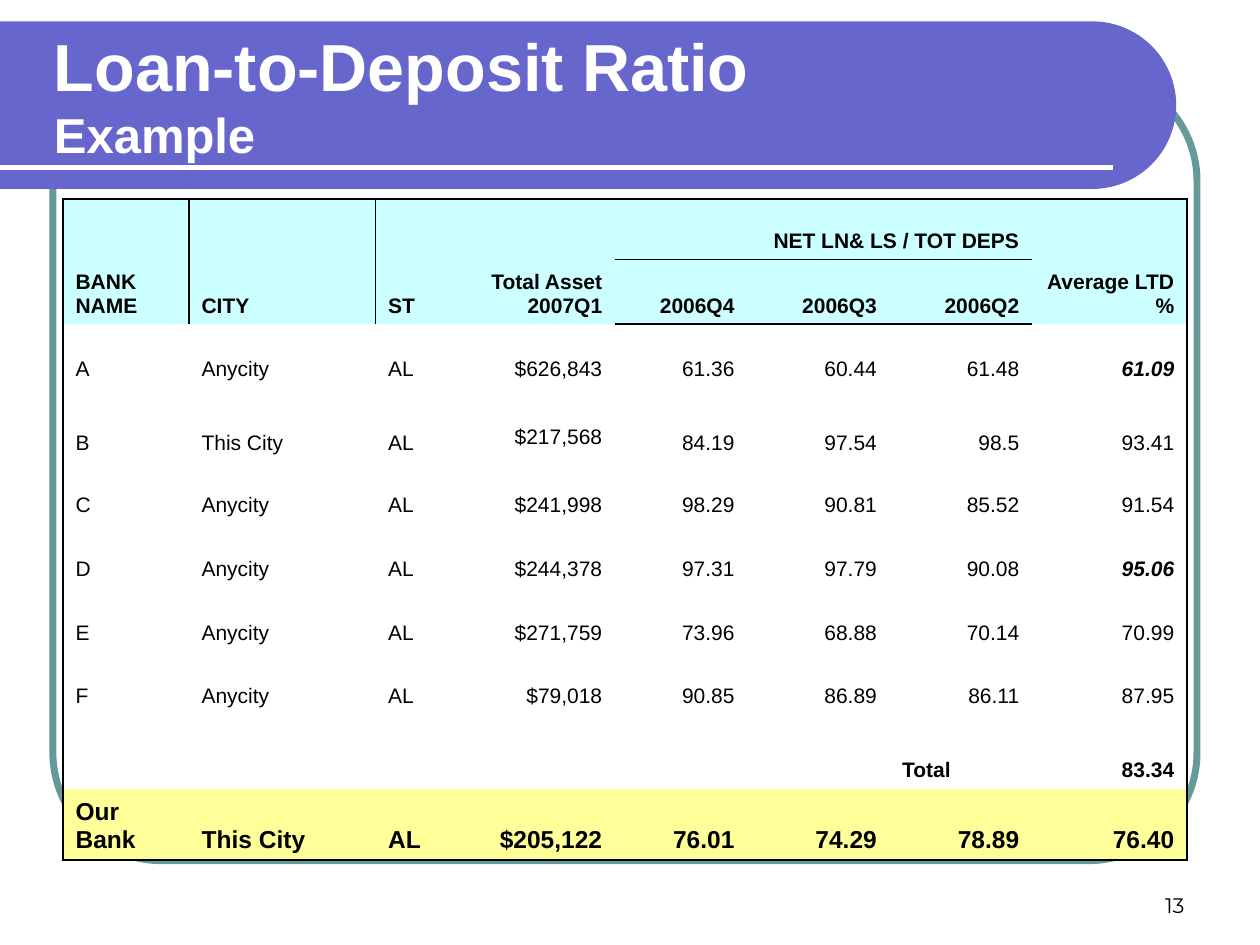
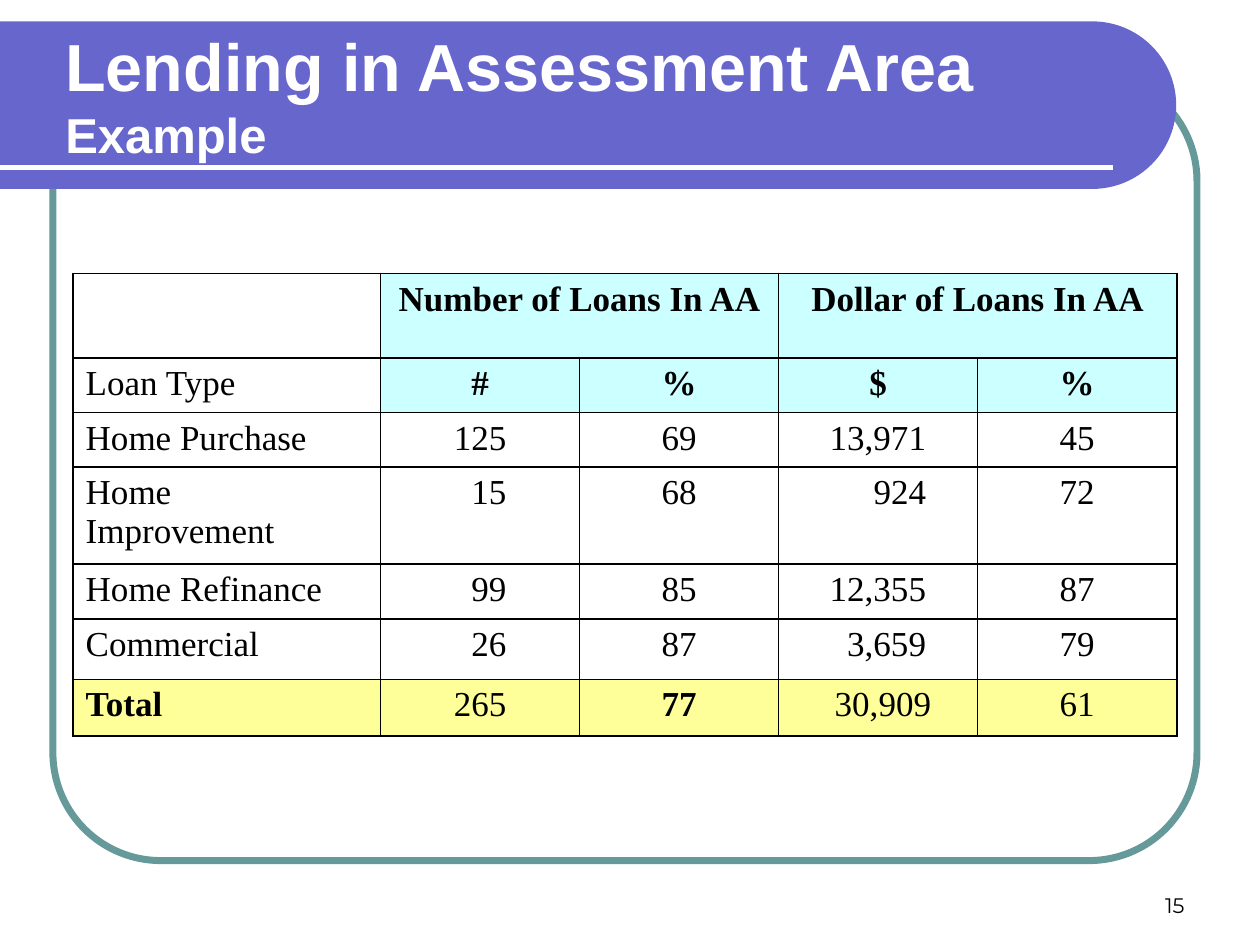
from math import cos, pi, sin

from lxml import etree
from pptx import Presentation
from pptx.dml.color import RGBColor
from pptx.enum.shapes import MSO_CONNECTOR, MSO_SHAPE
from pptx.enum.text import MSO_ANCHOR as ANCHOR, PP_ALIGN as ALIGN
from pptx.oxml.ns import qn
from pptx.util import Inches, Pt

WHITE = RGBColor(0xFF, 0xFF, 0xFF)
BLACK = RGBColor(0, 0, 0)
TEAL = RGBColor(0x66, 0x99, 0x99)
PURPLE = RGBColor(0x66, 0x66, 0xCC)
CYAN = RGBColor(0xCC, 0xFF, 0xFF)
YELLOW = RGBColor(0xFF, 0xFF, 0x99)

TITLE_FONT, NUMBER_FONT, LOAN_FONT = "Arial", "Montserrat", "Times New Roman"
PLAIN_TABLE = "{2D5ABB26-0587-4C30-8999-92F81FD0307C}"


class Deck:
    """Shared style and the slide being built."""

    def __init__(self):
        self.prs = Presentation()
        self.prs.slide_width, self.prs.slide_height = Inches(10), Inches(7.5)
        self.slide = None

    def new_slide(self, title, subtitle, number, title_left):
        self.slide = self.prs.slides.add_slide(self.prs.slide_layouts[6])
        self.frame()
        self.band()
        self.rule(0, 8.83, 1.33)
        p = self.text_box(7.17, 6.83, 2.33, 0.5, ANCHOR.BOTTOM, ALIGN.RIGHT)
        self.run(p, number, 12, NUMBER_FONT)
        p = self.text_box(title_left, 0.25, 8.6, 1, ANCHOR.MIDDLE)
        self.run(p, title, 38, TITLE_FONT, WHITE, bold=True)
        p.add_line_break()
        self.run(p, subtitle, 28, TITLE_FONT, WHITE, bold=True)

    def frame(self):
        sp = self.slide.shapes.add_shape(
            MSO_SHAPE.ROUNDED_RECTANGLE,
            Inches(0.42), Inches(0.58), Inches(9.08), Inches(6.25))
        sp.adjustments[0] = 0.137
        sp.shadow.inherit = False
        sp.fill.background()
        sp.line.color.rgb, sp.line.width = TEAL, Pt(4)

    def band(self, top=0.17, bottom=1.5, center_x=8.67, steps=48):
        radius, center_y = (bottom - top) / 2, (top + bottom) / 2
        angles = [pi * i / steps - pi / 2 for i in range(steps + 1)]
        arc = [(Inches(center_x + radius * cos(a)),
                Inches(center_y + radius * sin(a))) for a in angles]
        builder = self.slide.shapes.build_freeform(0, Inches(top))
        builder.add_line_segments(arc + [(0, Inches(bottom))], close=True)
        sp = builder.convert_to_shape()
        sp.shadow.inherit = False
        sp.fill.solid()
        sp.fill.fore_color.rgb = PURPLE
        sp.line.fill.background()

    def rule(self, left, right, y):
        line = self.slide.shapes.add_connector(
            MSO_CONNECTOR.STRAIGHT, Inches(left), Inches(y), Inches(right), Inches(y))
        line.line.color.rgb, line.line.width = WHITE, Pt(3)
        etree.SubElement(line._element.spPr, qn("a:effectLst"))

    def text_box(self, left, top, width, height, anchor, align=ALIGN.LEFT):
        box = self.slide.shapes.add_textbox(
            Inches(left), Inches(top), Inches(width), Inches(height))
        tf = box.text_frame
        tf.word_wrap, tf.vertical_anchor = True, anchor
        p = tf.paragraphs[0]
        p.alignment = align
        return p

    def run(self, p, text, size, font, color=BLACK, bold=False, italic=False):
        r = p.add_run()
        r.text = text
        r.font.size, r.font.name, r.font.color.rgb = Pt(size), font, color
        r.font.bold, r.font.italic = bold, italic

    def table(self, left, top, widths, heights, rows, merges, style):
        """style(row, column) returns the keyword arguments for fill_cell."""
        table = self.slide.shapes.add_table(
            len(heights), len(widths), Inches(left), Inches(top),
            Inches(sum(widths)), Inches(sum(heights))).table
        table.first_row = table.horz_banding = False
        table._tbl.tblPr.find(qn("a:tableStyleId")).text = PLAIN_TABLE
        for column, width in zip(table.columns, widths):
            column.width = Inches(width)
        for row, height in zip(table.rows, heights):
            row.height = Inches(height)
        for first, last in merges:
            table.cell(*first).merge(table.cell(*last))
        for r, texts in enumerate(rows):
            for c, text in enumerate(texts):
                self.fill_cell(table.cell(r, c), text, **style(r, c))

    def fill_cell(self, cell, text, size, font, bold=False, italic=False,
                  align=ALIGN.LEFT, anchor=ANCHOR.TOP, fill=None, borders="",
                  right=0.1, bottom=0.05):
        cell.vertical_anchor = anchor
        cell.margin_right, cell.margin_bottom = Inches(right), Inches(bottom)
        for side in borders:
            self.border(cell, side)
        if fill is None:
            cell.fill.background()
        else:
            cell.fill.solid()
            cell.fill.fore_color.rgb = fill
        if text:
            p = cell.text_frame.paragraphs[0]
            p.alignment = align
            self.run(p, text, size, font, bold=bold, italic=italic)

    def border(self, cell, side):
        tcPr = cell._tc.get_or_add_tcPr()
        ln = etree.SubElement(tcPr, qn("a:ln" + side), w=str(Pt(1)))
        solid = etree.SubElement(ln, qn("a:solidFill"))
        etree.SubElement(solid, qn("a:srgbClr"), val=str(BLACK))


# Bank comparison
BANK_ROWS = [
    ["BANK NAME", "CITY", "ST", "Total Asset 2007Q1", "NET LN& LS / TOT DEPS", "", "",
     "Average LTD %"],
    ["", "", "", "", "2006Q4", "2006Q3", "2006Q2", ""],
    ["A", "Anycity", "AL", "$626,843", "61.36", "60.44", "61.48", "61.09"],
    ["B", "This City", "AL", "$217,568", "84.19", "97.54", "98.5", "93.41"],
    ["C", "Anycity", "AL", "$241,998", "98.29", "90.81", "85.52", "91.54"],
    ["D", "Anycity", "AL", "$244,378", "97.31", "97.79", "90.08", "95.06"],
    ["E", "Anycity", "AL", "$271,759", "73.96", "68.88", "70.14", "70.99"],
    ["F", "Anycity", "AL", "$79,018", "90.85", "86.89", "86.11", "87.95"],
    ["", "", "", "", "", "", "Total", "83.34"],
    ["Our Bank", "This City", "AL", "$205,122", "76.01", "74.29", "78.89", "76.40"],
]
BANK_MERGES = [((0, c), (1, c)) for c in (0, 1, 2, 3, 7)] + [((0, 4), (0, 6))]


def bank_style(r, c):
    header, total, ours = r < 2, r == 8, r == 9
    extreme = (r, c) in ((2, 7), (5, 7))
    ratio_column = 4 <= c <= 6
    sides = {
        "L": c == 0 or (header and c == 1),
        "R": c == 7 or (header and c == 0),
        "T": r == 0 or (r == 1 and ratio_column),
        "B": ours or (r == 0 and ratio_column),
    }
    return dict(
        size=14 if ours else 12, font=TITLE_FONT,
        bold=header or total or ours or extreme, italic=extreme,
        align=ALIGN.LEFT if c < 3 or (total and c == 6) else ALIGN.RIGHT,
        anchor=ANCHOR.BOTTOM,
        fill=CYAN if header else YELLOW if ours else None,
        borders="".join(side for side, drawn in sides.items() if drawn),
        bottom=0.1 if (r, c) == (3, 3) else 0.05)


# Loans in the assessment area (AA)
LOAN_ROWS = [
    ["", "Number of Loans In AA", "", "Dollar of Loans In AA", ""],
    ["Loan Type", "#", "%", "$", "%"],
    ["Home Purchase", "125", "69", "13,971", "45"],
    ["Home Improvement", "15", "68", "924", "72"],
    ["Home Refinance", "99", "85", "12,355", "87"],
    ["Commercial", "26", "87", "3,659", "79"],
    ["Total", "265", "77", "30,909", "61"],
]
LOAN_MERGES = [((0, 1), (0, 2)), ((0, 3), (0, 4))]
AMOUNT_MARGINS = {1: 0.58, 3: 0.41}


def loan_style(r, c):
    header, total = r < 2 and c > 0, r == 6
    amount = r > 1 and c in AMOUNT_MARGINS
    margin = AMOUNT_MARGINS[c] if amount else 0.1
    if total and c == 3:
        margin = 0.37
    return dict(
        size=20, font=LOAN_FONT, bold=header or (total and c in (0, 2)),
        align=ALIGN.LEFT if c == 0 else ALIGN.RIGHT if amount else ALIGN.CENTER,
        fill=CYAN if header else YELLOW if total else None,
        borders="LRTB", right=margin)


def main():
    deck = Deck()

    # Loan-to-deposit slide
    deck.new_slide("Loan-to-Deposit Ratio", "Example", "13", 0.33)
    deck.table(0.5, 1.58, [1, 1.48, 0.57, 1.33, 1.05, 1.13, 1.13, 1.23],
               [0.48, 0.51, 0.5, 0.59, 0.49, 0.51, 0.51, 0.5, 0.59, 0.54],
               BANK_ROWS, BANK_MERGES, bank_style)

    # Assessment area slide
    deck.new_slide("Lending in Assessment Area", "Example", "15", 0.42)
    deck.table(0.58, 2.17, [2.44] + [1.58] * 4,
               [0.67, 0.43, 0.43, 0.77, 0.43, 0.48, 0.45],
               LOAN_ROWS, LOAN_MERGES, loan_style)

    deck.prs.save("out.pptx")


if __name__ == "__main__":
    main()
